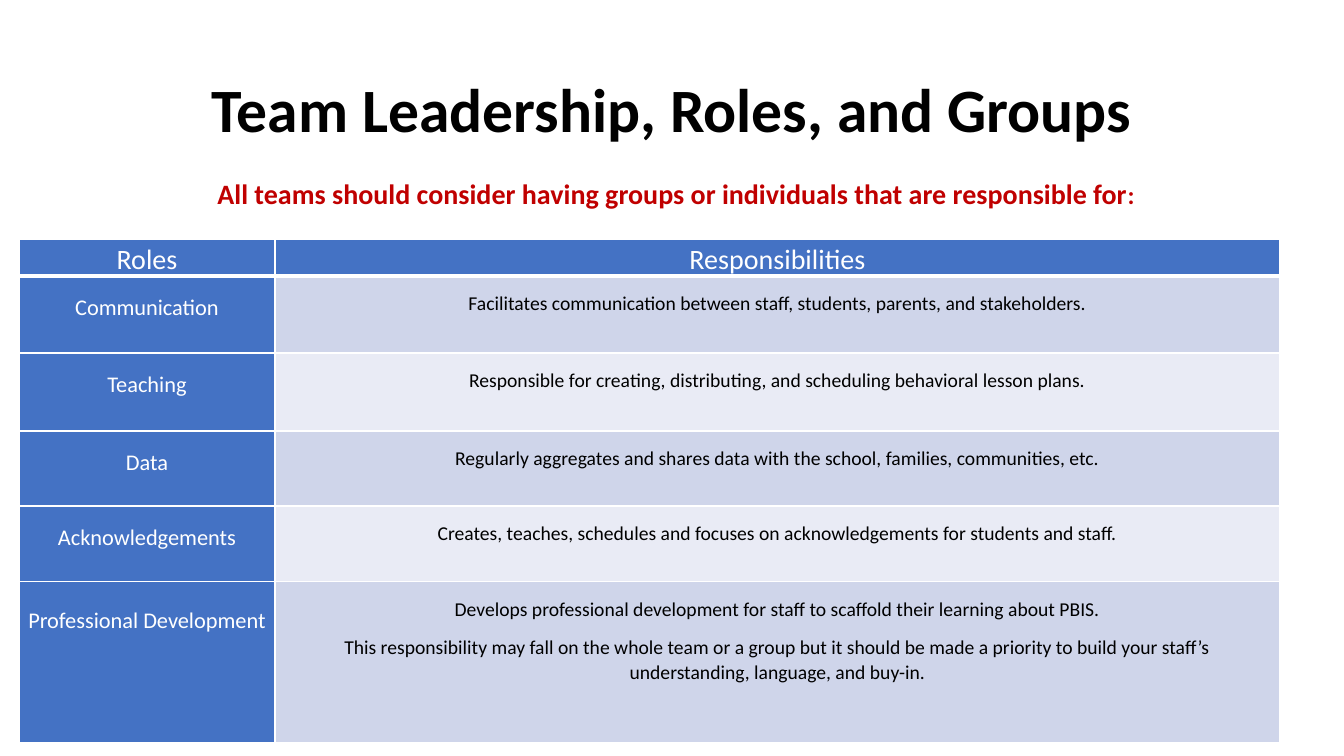
from lxml.etree import SubElement
from pptx import Presentation
from pptx.dml.color import RGBColor
from pptx.enum.text import MSO_ANCHOR, PP_ALIGN
from pptx.oxml.ns import qn
from pptx.util import Emu, Pt

# Content
TITLE = "Team Leadership, Roles, and Groups"
LEAD = ("All teams should consider having groups or individuals "
        "that are responsible for")
LEAD_END = ":"
HEADINGS = ("Roles", "Responsibilities")
ROLES = [
    ("Communication", [
        "Facilitates communication between staff, students, parents, and stakeholders."]),
    ("Teaching", [
        "Responsible for creating, distributing, and scheduling behavioral lesson plans."]),
    ("Data", [
        "Regularly aggregates and shares data with the school, families, communities, etc."]),
    ("Acknowledgements", [
        "Creates, teaches, schedules and focuses on acknowledgements for students and staff."]),
    ("Professional Development", [
        "Develops professional development for staff to scaffold their learning about PBIS.",
        "This responsibility may fall on the whole team or a group but it should be made "
        "a priority to build your staff’s understanding, language, and buy-in."]),
]

# Layout in px
SLIDE_SIZE = (1344, 756)
TITLE_BOX = (93, 40, 1159, 146)
LEAD_BOX = (70, 172, 1212, 45)
TABLE_ORIGIN = (19, 239)
COLUMN_WIDTHS = (256, 1005)
ROW_HEIGHTS = (37, 77, 78, 75, 76, 161)
SIDE_INSET, HEADING_INSET = 7, 1
ROLE_INSET, LAST_ROLE_INSET, DUTY_INSET = 16, 23, 14

THEME = {
    "font": "Calibri",
    "black": "000000", "white": "FFFFFF", "red": "C00000", "blue": "4472C4",
    "bands": ("CFD5EA", "E9EBF5"),
    "title": 44, "lead": 20, "lead_end": 18,
    "heading": 20, "role": 16, "duty": 14, "duty_gap": 9,
    "border": 1, "heading_border": 3,
}


def px(length):
    return Emu(round(length * 914400 / 100.8))


def style_run(run, size, color, bold=False):
    run.font.name = THEME["font"]
    run.font.size = Pt(size)
    run.font.bold = bold
    run.font.color.rgb = RGBColor.from_string(color)


def add_text(slide, box, text, size, color, anchor):
    shape = slide.shapes.add_textbox(*map(px, box))
    text_frame = shape.text_frame
    text_frame.word_wrap = True
    text_frame.vertical_anchor = anchor
    text_frame.text = text
    paragraph = text_frame.paragraphs[0]
    paragraph.alignment = PP_ALIGN.CENTER
    style_run(paragraph.runs[0], size, color, bold=True)
    return paragraph


def set_borders(cell, bottom):
    properties = cell._tc.get_or_add_tcPr()
    border = THEME["border"]
    for side, width in (("L", border), ("R", border), ("T", border), ("B", bottom)):
        line = SubElement(properties, qn(f"a:ln{side}"), w=str(Pt(width)))
        fill = SubElement(line, qn("a:solidFill"))
        SubElement(fill, qn("a:srgbClr"), val=THEME["white"])


def fill_cell(cell, lines, size, color, background, top_inset, bottom_border=THEME["border"]):
    set_borders(cell, bottom_border)
    cell.fill.solid()
    cell.fill.fore_color.rgb = RGBColor.from_string(background)
    cell.margin_left = cell.margin_right = px(SIDE_INSET)
    cell.margin_top, cell.margin_bottom = px(top_inset), 0
    cell.text_frame.text = "\n".join(lines)
    for index, paragraph in enumerate(cell.text_frame.paragraphs):
        paragraph.alignment = PP_ALIGN.CENTER
        paragraph.line_spacing = 1.07
        if index:
            paragraph.space_before = Pt(THEME["duty_gap"])
        style_run(paragraph.runs[0], size, color)


def add_roles_table(slide):
    table_size = (sum(COLUMN_WIDTHS), sum(ROW_HEIGHTS))
    table = slide.shapes.add_table(
        len(ROW_HEIGHTS), len(COLUMN_WIDTHS), *map(px, TABLE_ORIGIN + table_size)).table
    for column, width in zip(table.columns, COLUMN_WIDTHS):
        column.width = px(width)
    for row, height in zip(table.rows, ROW_HEIGHTS):
        row.height = px(height)

    # Heading row
    for column, heading in enumerate(HEADINGS):
        fill_cell(table.cell(0, column), [heading], THEME["heading"], THEME["white"],
                  THEME["blue"], HEADING_INSET, THEME["heading_border"])

    # One row per role, with alternating bands
    for row, (role, duties) in enumerate(ROLES, start=1):
        role_inset = LAST_ROLE_INSET if row == len(ROLES) else ROLE_INSET
        fill_cell(table.cell(row, 0), [role], THEME["role"], THEME["white"],
                  THEME["blue"], role_inset)
        fill_cell(table.cell(row, 1), duties, THEME["duty"], THEME["black"],
                  THEME["bands"][(row - 1) % 2], DUTY_INSET)


def main():
    presentation = Presentation()
    presentation.slide_width, presentation.slide_height = map(px, SLIDE_SIZE)
    slide = presentation.slides.add_slide(presentation.slide_layouts[6])

    # Title, table and lead sentence
    title = add_text(slide, TITLE_BOX, TITLE, THEME["title"], THEME["black"],
                     MSO_ANCHOR.MIDDLE)
    title.line_spacing = 0.9
    add_roles_table(slide)
    lead = add_text(slide, LEAD_BOX, LEAD, THEME["lead"], THEME["red"], MSO_ANCHOR.TOP)
    colon = lead.add_run()
    colon.text = LEAD_END
    style_run(colon, THEME["lead_end"], THEME["red"], bold=True)

    presentation.save("out.pptx")


if __name__ == "__main__":
    main()
